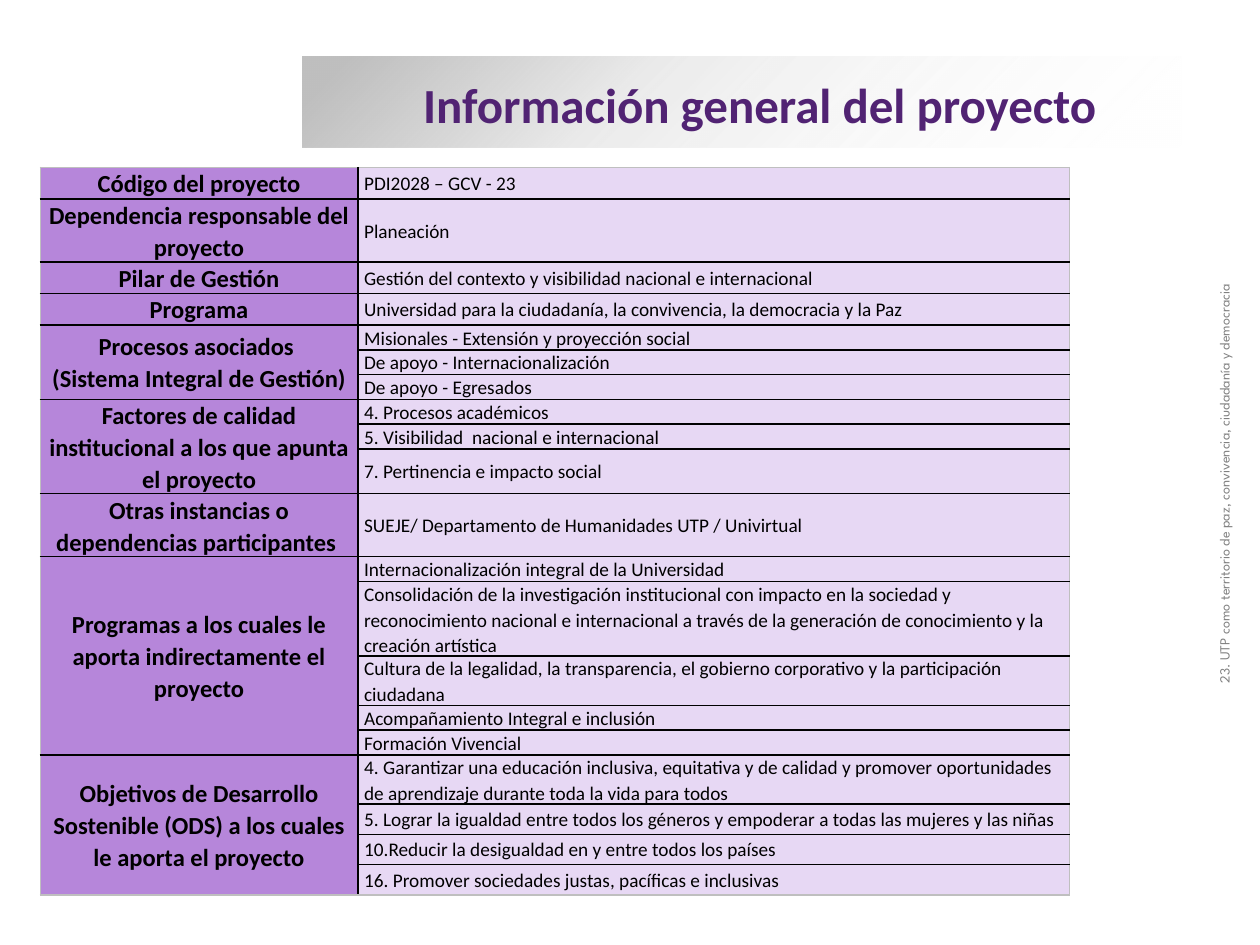
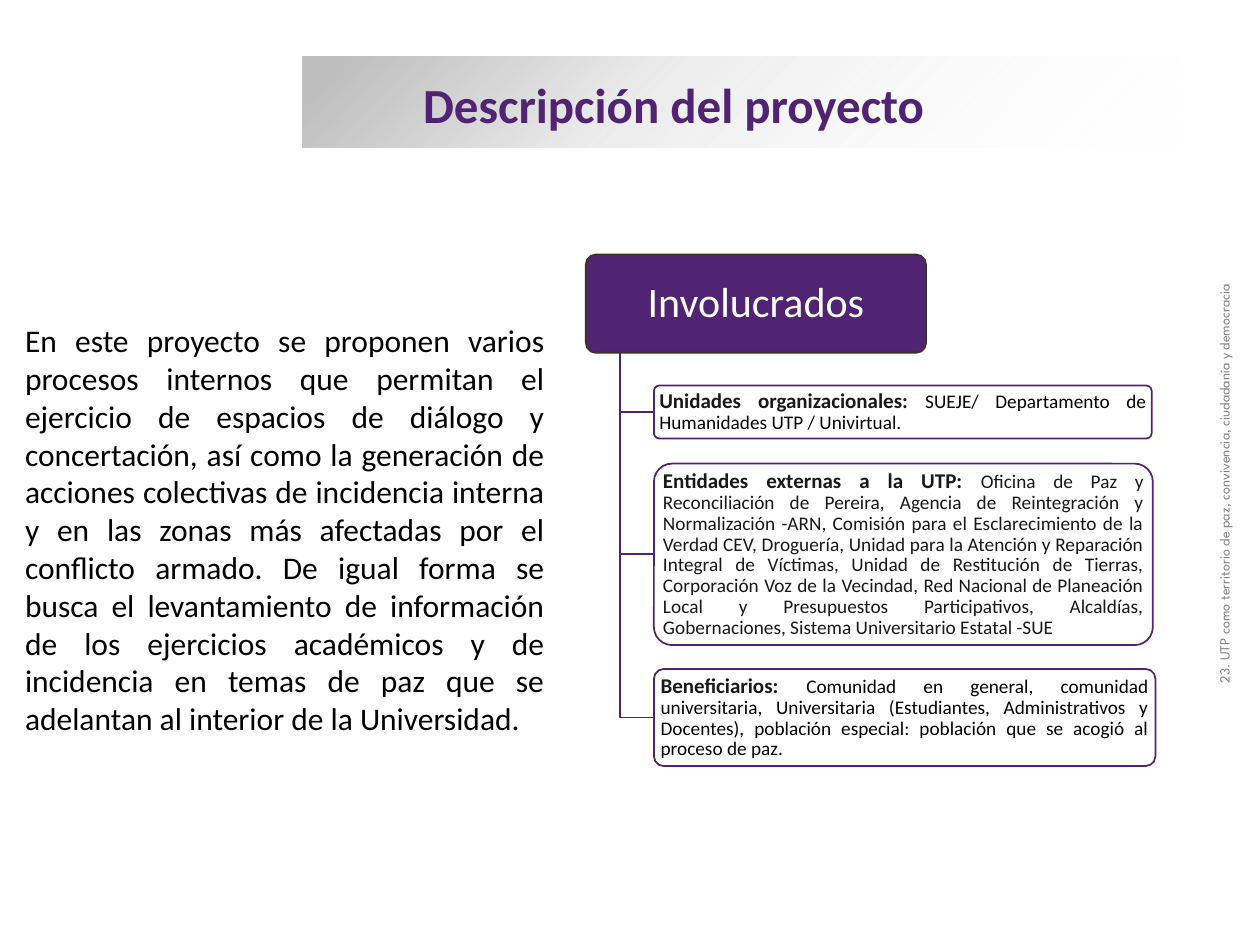
from lxml import etree
from pptx import Presentation
from pptx import util as u
from pptx.dml import color
from pptx.enum import shapes, text
from pptx.oxml import ns, parse_xml

PURPLE, LABEL, VALUE = "512373", "B686DA", "E7D8F4"
BLACK, WHITE, SILVER, GRAY, INK = "000000", "FFFFFF", "BFBFBF", "808080", "191919"
LEFT, CENTER, JUSTIFY = text.PP_ALIGN.LEFT, text.PP_ALIGN.CENTER, text.PP_ALIGN.JUSTIFY
MIDDLE = text.MSO_ANCHOR.MIDDLE
NAMESPACE = ns.nsdecls("a")


def rgb(value):
    return color.RGBColor.from_string(value)


def write(frame, runs, alignment=LEFT, spacing=None, font="Calibri"):
    frame.word_wrap = True
    paragraph = frame.paragraphs[0]
    paragraph.alignment = alignment
    if spacing:
        paragraph.line_spacing = spacing
    for content, size, bold, ink in runs:
        for index, line in enumerate(content.split("\n")):
            if index:
                paragraph.add_line_break()
            run = paragraph.add_run()
            run.text = line
            run.font.name = font
            run.font.size = u.Pt(size)
            run.font.bold = bold
            run.font.color.rgb = rgb(ink)


presentation = Presentation()
presentation.slide_width, presentation.slide_height = u.Inches(10), u.Inches(7.5)

slides = []
for title in ["Información general del proyecto", "Descripción del proyecto"]:
    slide = presentation.slides.add_slide(presentation.slide_layouts[6])
    slides.append(slide)

    band = slide.shapes.add_shape(shapes.MSO_SHAPE.RECTANGLE, u.Inches(2.4), u.Inches(0.45),
                                  u.Inches(6.98), u.Inches(0.72))
    band.shadow.inherit = False
    band.line.fill.background()
    band.fill.background()
    stops = "".join(
        f'<a:gs pos="{position * 1000}"><a:srgbClr val="{value}">'
        f'<a:alpha val="{alpha * 1000}"/></a:srgbClr></a:gs>'
        for position, value, alpha in [(5, SILVER, 100), (37, SILVER, 31), (100, WHITE, 0)])
    gradient = parse_xml(f'<a:gradFill {NAMESPACE} rotWithShape="1"><a:gsLst>{stops}</a:gsLst>'
                         '<a:lin ang="2700000" scaled="0"/></a:gradFill>')
    properties = band.element.spPr
    properties.replace(properties.find(ns.qn("a:noFill")), gradient)

    title_box = slide.shapes.add_textbox(u.Inches(3.26), u.Inches(0.54), u.Inches(6.2), u.Inches(0.57))
    title_box.text_frame.vertical_anchor = MIDDLE
    write(title_box.text_frame, [(title, 28, True, PURPLE)])

    side_note = slide.shapes.add_textbox(u.Inches(7.3), u.Inches(3.72), u.Inches(4.84), u.Inches(0.24))
    side_note.rotation = 270
    write(side_note.text_frame,
          [("23. UTP como territorio de paz, convivencia, ciudadanía y democracia", 8, False, GRAY)],
          CENTER, font="League Spartan")

information, description = slides

project_facts = [
    ("Código del proyecto", [("PDI2028 – GCV - 23", 0.25)]),
    ("Dependencia responsable del proyecto", [("Planeación", 0.5)]),
    ("Pilar de Gestión", [("Gestión del contexto y visibilidad nacional e internacional", 0.25)]),
    ("Programa", [("Universidad para la ciudadanía, la convivencia, la democracia y la Paz", 0.25)]),
    ("Procesos asociados \n(Sistema Integral de Gestión)", [
        ("Misionales - Extensión y proyección social", 0.19),
        ("De apoyo - Internacionalización", 0.19),
        ("De apoyo - Egresados", 0.19)]),
    ("Factores de calidad institucional a los que apunta el proyecto", [
        ("4. Procesos académicos", 0.19),
        ("5. Visibilidad  nacional e internacional", 0.19),
        ("7. Pertinencia e impacto social", 0.35)]),
    ("Otras instancias o dependencias participantes ", [
        ("SUEJE/ Departamento de Humanidades UTP / Univirtual", 0.5)]),
    ("Programas a los cuales le aporta indirectamente el proyecto", [
        ("Internacionalización integral de la Universidad", 0.19),
        ("Consolidación de la investigación institucional con impacto en la sociedad y "
         "reconocimiento nacional e internacional a través de la generación de conocimiento "
         "y la creación artística", 0.59),
        ("Cultura de la legalidad, la transparencia, el gobierno corporativo y la "
         "participación ciudadana", 0.39),
        ("Acompañamiento Integral e inclusión", 0.19),
        ("Formación Vivencial", 0.19)]),
    ("Objetivos de Desarrollo Sostenible (ODS) a los cuales le aporta el proyecto", [
        ("4. Garantizar una educación inclusiva, equitativa y de calidad y promover "
         "oportunidades de aprendizaje durante toda la vida para todos", 0.39),
        ("5. Lograr la igualdad entre todos los géneros y empoderar a todas las mujeres "
         "y las niñas", 0.24),
        ("10.Reducir la desigualdad en y entre todos los países", 0.24),
        ("16. Promover sociedades justas, pacíficas e inclusivas", 0.24)]),
]
heights = [height for _, values in project_facts for _, height in values]
row_count = len(heights)
table = information.shapes.add_table(row_count, 2, u.Inches(0.32), u.Inches(1.33),
                                     u.Inches(8.17), u.Inches(sum(heights))).table
table.first_row = table.horz_banding = False
for column, width in zip(table.columns, [2.52, 5.65]):
    column.width = u.Inches(width)
for row, height in zip(table.rows, heights):
    row.height = u.Inches(height)

first = 0
for label, values in project_facts:
    last = first + len(values) - 1
    if last > first:
        table.cell(first, 0).merge(table.cell(last, 0))
    write(table.cell(first, 0).text_frame, [(label, 14, True, BLACK)], CENTER, 1.07)
    for offset, (value, _) in enumerate(values):
        write(table.cell(first + offset, 1).text_frame, [(value, 11, False, BLACK)], LEFT, 1.07)
        for column_index, (fill, margin) in enumerate([(LABEL, 0.04), (VALUE, 0.05)]):
            cell = table.cell(first + offset, column_index)
            cell.vertical_anchor = MIDDLE
            cell.margin_left = cell.margin_right = u.Inches(margin)
            cell.margin_top = cell.margin_bottom = 0
            bottom_row = last if column_index == 0 else first + offset
            outer_edges = {"lnL": column_index == 0, "lnR": column_index == 1,
                           "lnT": first + offset == 0, "lnB": bottom_row == row_count - 1}
            cell_properties = cell._tc.get_or_add_tcPr()
            for edge, outer in outer_edges.items():
                line = etree.SubElement(cell_properties, ns.qn(f"a:{edge}"), w="12700")
                solid = etree.SubElement(line, ns.qn("a:solidFill"))
                etree.SubElement(solid, ns.qn("a:srgbClr"), val=SILVER if outer else BLACK)
            cell.fill.solid()
            cell.fill.fore_color.rgb = rgb(fill)
    first = last + 1

summary = description.shapes.add_textbox(u.Inches(0.1), u.Inches(2.5), u.Inches(4.32), u.Inches(3.43))
write(summary.text_frame, [(
    "En este proyecto se proponen varios procesos internos que permitan el ejercicio de espacios "
    "de diálogo y concertación, así como la generación de acciones colectivas de incidencia "
    "interna y en las zonas más afectadas por el conflicto armado. De igual forma se busca el "
    "levantamiento de información de los ejercicios académicos y de incidencia en temas de paz "
    "que se adelantan al interior de la Universidad.", 18, False, BLACK)], JUSTIFY)

trunk, trunk_top, branch = 4.92, 2.8, 5.19
participants = [
    (4.65, 2.02, 2.7, 0.78, PURPLE, "3F3029", CENTER, [("Involucrados", 24, False, WHITE)]),
    (branch, 3.06, 3.95, 0.42, WHITE, PURPLE, JUSTIFY, [
        ("Unidades organizacionales: ", 12, True, INK),
        ("SUEJE/ Departamento de Humanidades UTP / Univirtual.", 11, False, BLACK)]),
    (branch, 3.68, 3.96, 1.44, WHITE, PURPLE, JUSTIFY, [
        ("Entidades externas a la UTP: ", 12, True, INK),
        ("Oficina de Paz y Reconciliación de Pereira, Agencia de Reintegración y Normalización "
         "-ARN, Comisión para el Esclarecimiento de la Verdad CEV, Droguería, Unidad para la "
         "Atención y Reparación Integral de Víctimas, Unidad de Restitución de Tierras, "
         "Corporación Voz de la Vecindad, Red Nacional de Planeación Local y Presupuestos "
         "Participativos, Alcaldías, Gobernaciones, Sistema Universitario Estatal -SUE",
         11, False, INK)]),
    (branch, 5.31, 3.98, 0.77, WHITE, PURPLE, JUSTIFY, [
        ("Beneficiarios: ", 12, True, INK),
        ("Comunidad en general, comunidad universitaria, Universitaria (Estudiantes, "
         "Administrativos y Docentes), población especial: población que se acogió al proceso "
         "de paz.", 11, False, BLACK)]),
]
for left, top, width, height, fill, outline, alignment, runs in participants:
    if left == branch:
        middle = u.Inches(top + height / 2)
        builder = description.shapes.build_freeform(u.Inches(trunk), u.Inches(trunk_top))
        builder.add_line_segments([(u.Inches(trunk), middle), (u.Inches(branch), middle)], close=False)
        elbow = builder.convert_to_shape()
        elbow.shadow.inherit = False
        elbow.fill.background()
        elbow.line.color.rgb = rgb(PURPLE)
        elbow.line.width = u.Pt(1)
    box = description.shapes.add_shape(shapes.MSO_SHAPE.ROUNDED_RECTANGLE, u.Inches(left),
                                       u.Inches(top), u.Inches(width), u.Inches(height))
    box.adjustments[0] = 0.1
    box.shadow.inherit = False
    box.fill.solid()
    box.fill.fore_color.rgb = rgb(fill)
    box.line.color.rgb = rgb(outline)
    box.line.width = u.Pt(1)
    frame = box.text_frame
    frame.vertical_anchor = MIDDLE
    frame.margin_left = frame.margin_right = u.Inches(0.03)
    frame.margin_top = frame.margin_bottom = u.Inches(0.02)
    write(frame, runs, alignment, 0.9)

presentation.save("out.pptx")
